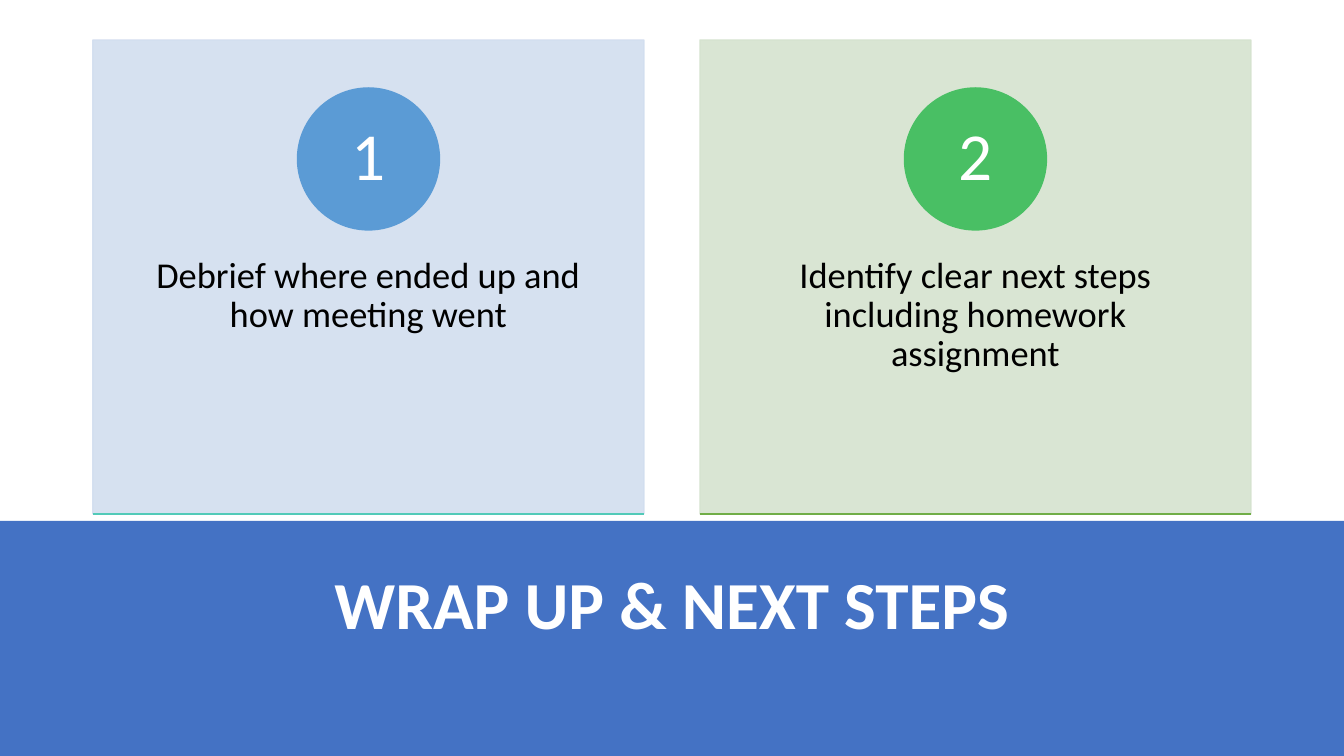
import pptx
import pptx.util
import pptx.dml.color
import pptx.enum.shapes
import pptx.enum.text
import pptx.oxml.ns
import lxml.etree

TITLE = "WRAP UP & NEXT STEPS"
# number, text, card colour, circle colour, base line colour
CARDS = [
    ("1", "Debrief where ended up and how meeting went", "D2DEEF", "5B9BD5", "52CAB8"),
    ("2", "Identify clear next steps including homework assignment",
     "D5E3CF", "49BF64", "70AD47"),
]
FONT = "Calibri"
EMU_PER_PX = 914400 / 100.8
SLIDE_WIDTH, SLIDE_HEIGHT = 1344, 756
BAND_TOP = 521
CARD_LEFT, CARD_TOP, CARD_WIDTH, CARD_HEIGHT = 93, 40, 551, 474
CARD_STEP = 607
CIRCLE_TOP, CIRCLE_SIZE = 88, 142
TEXT_TOP, TEXT_HEIGHT = 221, 284
SHAPES = pptx.enum.shapes.MSO_SHAPE
ANCHORS = pptx.enum.text.MSO_ANCHOR


def px(*lengths):
    return [pptx.util.Emu(round(length * EMU_PER_PX)) for length in lengths]


def rgb(hex_color):
    return pptx.dml.color.RGBColor.from_string(hex_color)


def set_opacity(color_format_parent, percent):
    for color in color_format_parent.iter(pptx.oxml.ns.qn("a:srgbClr")):
        alpha = lxml.etree.SubElement(color, pptx.oxml.ns.qn("a:alpha"))
        alpha.set("val", str(percent * 1000))


def add_block(slide, kind, box, color, outlined=True):
    shape = slide.shapes.add_shape(kind, *px(*box))
    shape.shadow.inherit = False
    shape.fill.solid()
    shape.fill.fore_color.rgb = rgb(color)
    if outlined:
        shape.line.color.rgb = rgb(color)
        shape.line.width = pptx.util.Pt(1)
    else:
        shape.line.fill.background()
    return shape


def write(shape, text, size, color, anchor, insets, bold=False):
    frame = shape.text_frame
    frame.word_wrap = True
    frame.vertical_anchor = anchor
    horizontal, vertical = px(*insets)
    frame.margin_left = frame.margin_right = horizontal
    frame.margin_top = frame.margin_bottom = vertical
    paragraph = frame.paragraphs[0]
    paragraph.text = text
    paragraph.alignment = pptx.enum.text.PP_ALIGN.CENTER
    paragraph.line_spacing = 0.9
    paragraph.font.name = FONT
    paragraph.font.size = pptx.util.Pt(size)
    paragraph.font.bold = bold
    paragraph.font.color.rgb = rgb(color)


def add_base_line(slide, left, top, width, color):
    line = slide.shapes.add_connector(
        pptx.enum.shapes.MSO_CONNECTOR.STRAIGHT, *px(left, top, left + width, top))
    line.line.color.rgb = rgb(color)
    line.line.width = pptx.util.Pt(1)
    properties = line._element.spPr
    lxml.etree.SubElement(properties, pptx.oxml.ns.qn("a:effectLst"))


def add_card(slide, left, number, text, card_color, circle_color, line_color):
    card = add_block(slide, SHAPES.RECTANGLE,
                     (left, CARD_TOP, CARD_WIDTH, CARD_HEIGHT), card_color)
    set_opacity(card._element.spPr, 90)
    label = slide.shapes.add_textbox(*px(left, TEXT_TOP, CARD_WIDTH, TEXT_HEIGHT))
    write(label, text, 26, "000000", ANCHORS.TOP, (43, 36))
    circle_left = left + (CARD_WIDTH - CIRCLE_SIZE) / 2
    circle = add_block(slide, SHAPES.OVAL,
                       (circle_left, CIRCLE_TOP, CIRCLE_SIZE, CIRCLE_SIZE), circle_color)
    write(circle, number, 48, "FFFFFF", ANCHORS.MIDDLE, (11, 1))
    add_base_line(slide, left, CARD_TOP + CARD_HEIGHT, CARD_WIDTH, line_color)


def main():
    presentation = pptx.Presentation()
    presentation.slide_width, presentation.slide_height = px(SLIDE_WIDTH, SLIDE_HEIGHT)
    slide = presentation.slides.add_slide(presentation.slide_layouts[6])

    # Title band
    add_block(slide, SHAPES.RECTANGLE,
              (0, BAND_TOP, SLIDE_WIDTH, SLIDE_HEIGHT - BAND_TOP), "4472C4", outlined=False)
    title = slide.shapes.add_textbox(*px(CARD_LEFT, 535, CARD_STEP + CARD_WIDTH, 146))
    write(title, TITLE, 48, "FFFFFF", ANCHORS.MIDDLE, (10, 5), bold=True)

    # Numbered cards
    for index, card in enumerate(CARDS):
        add_card(slide, CARD_LEFT + index * CARD_STEP, *card)

    presentation.save("out.pptx")


if __name__ == "__main__":
    main()
